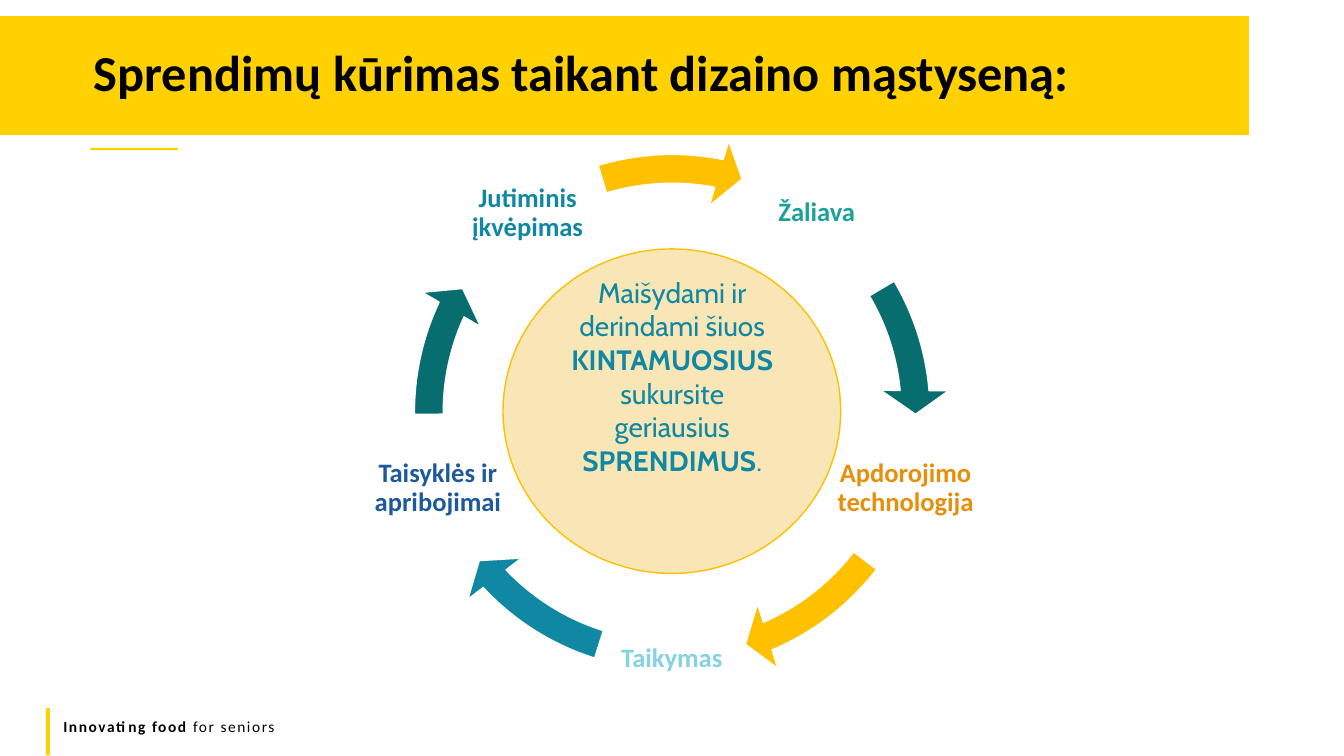
import pptx
import pptx.util
import pptx.dml.color
import pptx.enum.shapes
import pptx.enum.text

Pt = pptx.util.Pt
Shape = pptx.enum.shapes.MSO_SHAPE
Align = pptx.enum.text.PP_ALIGN
Anchor = pptx.enum.text.MSO_ANCHOR

HUES = {
    "yellow": "FFD100", "black": "000000", "white": "FFFFFF",
    "gold": "FFC000", "cream": "F9E6B6", "pine": "086D6E",
    "teal": "1188A3", "green": "1BA19A", "orange": "E78E0B",
    "sky": "85D2E1", "blue": "1D599B",
}
RING = (282.2, 96.5, 396, 396)
SIDE = 105.8
STEPS = [
    ("Žaliava", 530.6, 99.4, "green", "pine", 329.44, 354.88),
    ("Apdorojimo technologija", 594, 295.9, "orange", "gold", 37.56, 66.9),
    ("Taikymas", 427, 417.6, "sky", "teal", 107.5, 136.84),
    ("Taisyklės ir apribojimai", 259.9, 295.9, "blue", "pine", 179.52, 204.96),
    ("Jutiminis įkvėpimas", 324, 99.4, "teal", "gold", 253.31, 281.09),
]


def tint(name):
    return pptx.dml.color.RGBColor.from_string(HUES[name])


def style(run, size, face, hue, bold):
    font = run.font
    font.size, font.name, font.bold = Pt(size), face, bold
    font.color.rgb = tint(hue)


def draw(slide, kind, box, fill, line=None):
    shape = slide.shapes.add_shape(kind, *map(Pt, box))
    shape.shadow.inherit = False
    shape.fill.solid()
    shape.fill.fore_color.rgb = tint(fill)
    if line:
        shape.line.color.rgb = tint(line)
        shape.line.width = Pt(1)
    else:
        shape.line.fill.background()
    return shape


def write(slide, box, parts, size, face, hue, align=Align.CENTER):
    frame = slide.shapes.add_textbox(*map(Pt, box)).text_frame
    frame.word_wrap = True
    para = frame.paragraphs[0]
    para.alignment = align
    for text, bold in parts:
        run = para.add_run()
        run.text = text
        style(run, size, face, hue, bold)
    return frame


def title(slide, text):
    head = slide.shapes.title
    head.left, head.top, head.width, head.height = map(Pt, (0, 11.5, 892.1, 85))
    head.fill.solid()
    head.fill.fore_color.rgb = tint("yellow")
    frame = head.text_frame
    frame.text = text
    frame.margin_left = Pt(67)
    frame.vertical_anchor = Anchor.MIDDLE
    frame.auto_size = pptx.enum.text.MSO_AUTO_SIZE.NONE
    para = frame.paragraphs[0]
    para.alignment = Align.LEFT
    para.line_spacing = 0.9
    style(para.runs[0], 36, "Calibri", "black", True)


def label(slide, text, left, top, hue):
    frame = write(slide, (left, top, SIDE, SIDE), [(text, True)], 19, "Calibri", hue)
    frame.vertical_anchor = Anchor.MIDDLE
    frame.margin_left = frame.margin_right = Pt(2)
    frame.margin_top = frame.margin_bottom = Pt(2)
    frame.paragraphs[0].line_spacing = 0.9


def arrow(slide, fill, start, end):
    shape = draw(slide, Shape.CIRCULAR_ARROW, RING, fill, "white")
    degree = 0.6
    values = (0.052, 5.6 * degree, end * degree, start * degree, 0.061)
    for spot, value in enumerate(values):
        shape.adjustments[spot] = value


def footer(slide):
    parts = [("Innovating food ", True), ("for seniors", False)]
    frame = write(slide, (38.2, 509, 864, 21), parts, 11, "Calibri", "black", Align.LEFT)
    for run in frame.paragraphs[0].runs:
        run.font._element.set("spc", "110")
    draw(slide, Shape.RECTANGLE, (32.8, 505.8, 2.9, 33.8), "yellow")


def main():
    deck = pptx.Presentation()
    deck.slide_width, deck.slide_height = Pt(960), Pt(540)
    slide = deck.slides.add_slide(deck.slide_layouts[5])
    title(slide, "Sprendimų kūrimas taikant dizaino mąstyseną:")
    draw(slide, Shape.RECTANGLE, (64.6, 105.6, 62.6, 1.7), "yellow")
    footer(slide)
    for text, left, top, hue, fill, start, end in STEPS:
        label(slide, text, left, top, hue)
        arrow(slide, fill, start, end)
    draw(slide, Shape.OVAL, (359.3, 177.8, 241.2, 231.8), "cream", "gold")
    parts = [
        ("Maišydami ir derindami šiuos ", False),
        ("KINTAMUOSIUS", True),
        (" sukursite geriausius ", False),
        ("SPRENDIMUS", True),
        (".", False),
    ]
    write(slide, (393.8, 193, 172.8, 152.6), parts, 20, "Cabin", "teal")
    deck.save("out.pptx")


if __name__ == "__main__":
    main()
